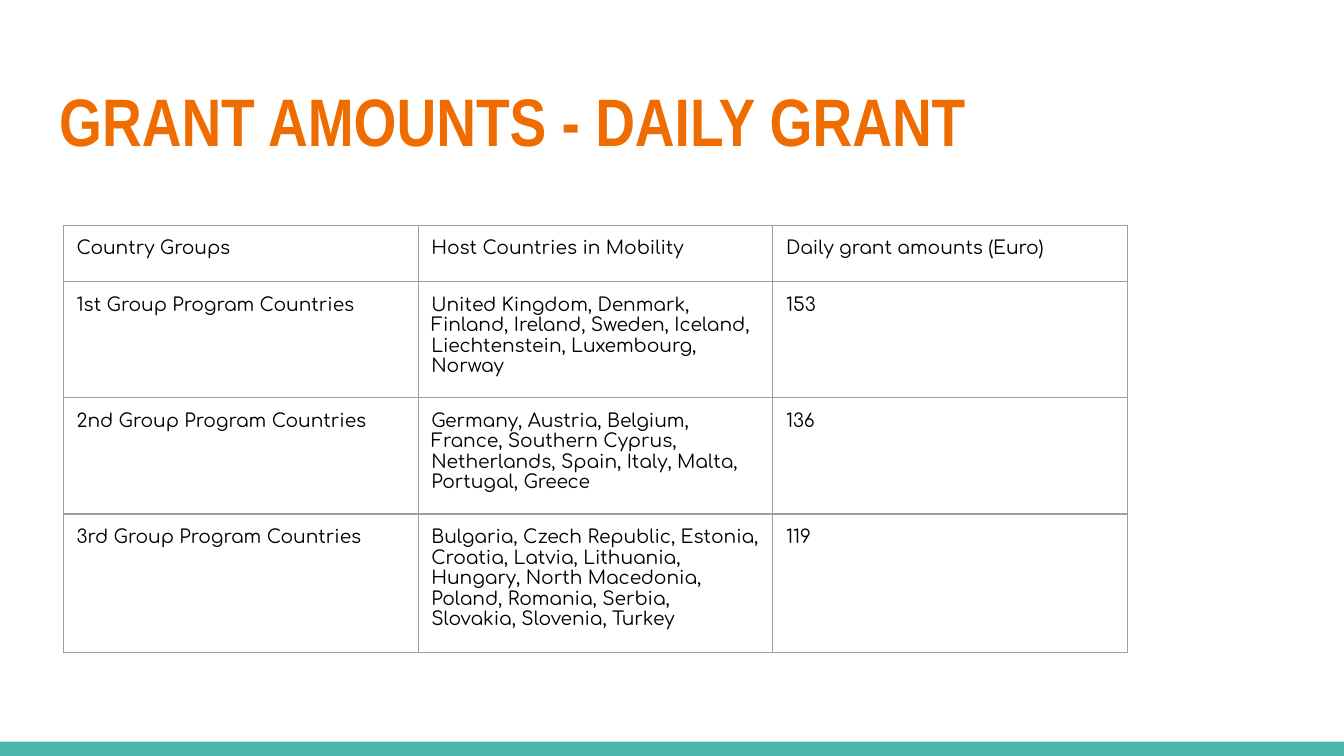
from lxml.etree import SubElement
from pptx import Presentation
from pptx.dml.color import RGBColor as RGB
from pptx.enum.shapes import MSO_SHAPE as Kind
from pptx.enum.text import MSO_ANCHOR as Anchor
from pptx.oxml.ns import qn
from pptx.util import Cm, Pt

THEME = {
    "title": {"name": "Arial Narrow", "size": Pt(36), "bold": True, "color": "EF6C00"},
    "body": {"name": "Comfortaa", "size": Pt(10), "bold": False, "color": "000000"},
    "bar": "4DB6AC",
    "grid": "9E9E9E",
    "rule": Pt(0.75),
    "inset": Cm(0.25),
}

ROWS = [
    ("Country Groups", "Host Countries in Mobility", "Daily grant amounts (Euro)"),
    ("1st Group Program Countries",
     "United Kingdom, Denmark, Finland, Ireland, Sweden, Iceland, "
     "Liechtenstein, Luxembourg, Norway", "153"),
    ("2nd Group Program Countries",
     "Germany, Austria, Belgium, France, Southern Cyprus, Netherlands, "
     "Spain, Italy, Malta, Portugal, Greece", "136"),
    ("3rd Group Program Countries",
     "Bulgaria, Czech Republic, Estonia, Croatia, Latvia, Lithuania, Hungary, "
     "North Macedonia, Poland, Romania, Serbia, Slovakia, Slovenia, Turkey", "119"),
]


class Deck:
    def __init__(self, theme, width, height):
        self.theme = theme
        self.show = Presentation()
        self.show.slide_width, self.show.slide_height = width, height
        self.slide = self.show.slides.add_slide(self.show.slide_layouts[6])

    def label(self, frame, text, style):
        """Put styled text into a frame."""
        run = frame.paragraphs[0].add_run()
        run.text = text
        for key, value in self.theme[style].items():
            if key == "color":
                run.font.color.rgb = RGB.from_string(value)
            else:
                setattr(run.font, key, value)

    def pad(self, item):
        """Give a cell or text frame the same inset on every side."""
        for side in ("left", "top", "right", "bottom"):
            setattr(item, f"margin_{side}", self.theme["inset"])

    def bar(self, *box):
        bar = self.slide.shapes.add_shape(Kind.RECTANGLE, *box)
        bar.shadow.inherit = False
        bar.fill.solid()
        bar.fill.fore_color.rgb = RGB.from_string(self.theme["bar"])
        bar.line.fill.background()

    def title(self, text, *box):
        frame = self.slide.shapes.add_textbox(*box).text_frame
        frame.word_wrap = True
        frame.vertical_anchor = Anchor.TOP
        self.pad(frame)
        self.label(frame, text, "title")

    def edge(self, cell):
        """Draw the four borders of a cell."""
        props = cell._tc.get_or_add_tcPr()
        for n, tag in enumerate(("a:lnL", "a:lnR", "a:lnT", "a:lnB")):
            line = props.makeelement(qn(tag), {"w": str(int(self.theme["rule"]))})
            fill = SubElement(line, qn("a:solidFill"))
            SubElement(fill, qn("a:srgbClr"), val=self.theme["grid"])
            props.insert(n, line)

    def table(self, rows, left, top, width, heights):
        grid = self.slide.shapes.add_table(
            len(rows), len(rows[0]), left, top, width, sum(heights)).table
        grid.first_row = grid.horz_banding = False
        for r, (row, height) in enumerate(zip(rows, heights)):
            grid.rows[r].height = height
            for c, text in enumerate(row):
                cell = grid.cell(r, c)
                cell.fill.background()
                self.pad(cell)
                self.label(cell.text_frame, text, "body")
                self.edge(cell)

    def save(self):
        self.show.save("out.pptx")


def main():
    deck = Deck(THEME, Cm(25.4), Cm(14.29))
    deck.bar(Cm(0), Cm(14.02), Cm(25.4), Cm(0.27))
    deck.title("GRANT AMOUNTS - DAILY GRANT", Cm(0.87), Cm(1.25), Cm(23.66), Cm(1.96))
    heights = [Cm(h) for h in (1.06, 2.06, 2.06, 2.45)]
    deck.table(ROWS, Cm(1.2), Cm(4.26), Cm(20.11), heights)
    deck.save()


if __name__ == "__main__":
    main()
